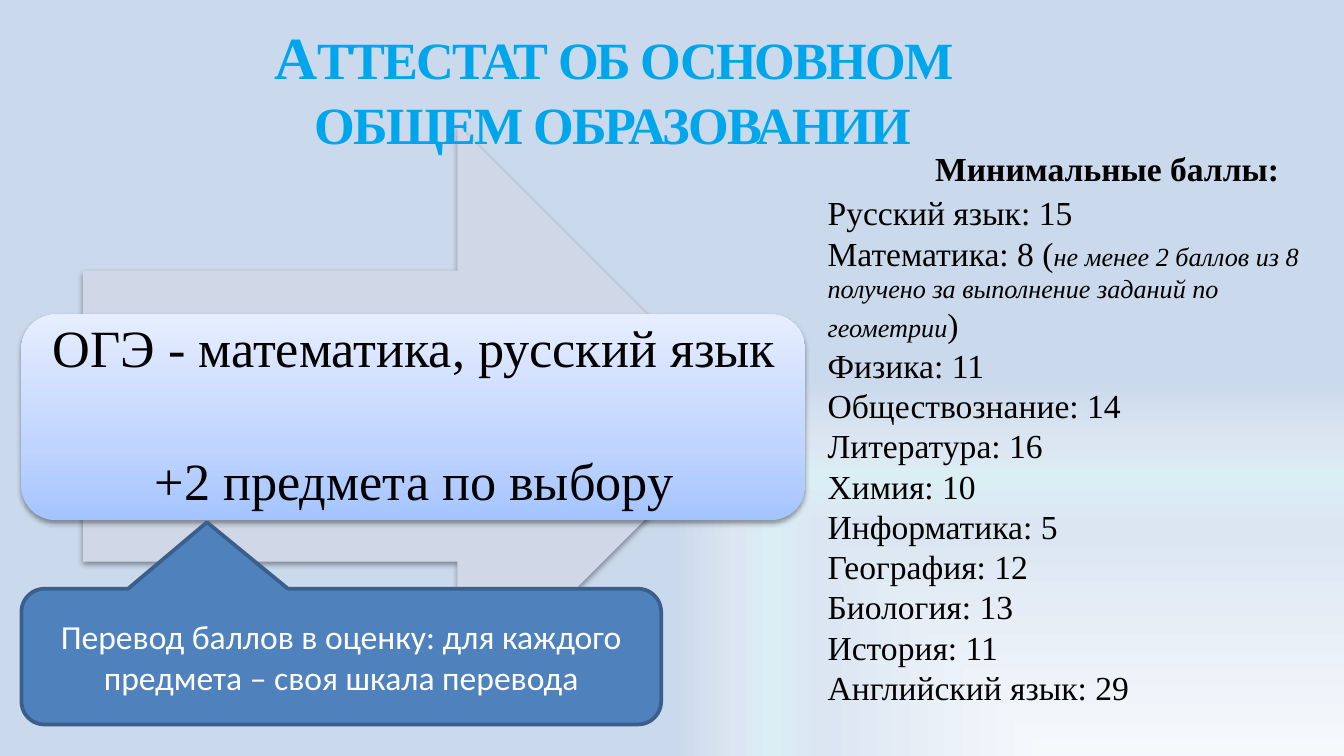
from dataclasses import dataclass

from pptx import Presentation
from pptx.dml.color import RGBColor
from pptx.enum.shapes import MSO_SHAPE as Preset
from pptx.enum.text import MSO_ANCHOR as Anchor, PP_ALIGN as Align
from pptx.oxml import parse_xml
from pptx.oxml.ns import nsdecls
from pptx.shapes.autoshape import Shape
from pptx.slide import Slide
from pptx.util import Pt

SERIF = "Times New Roman"
SANS = "Calibri"
BLACK = RGBColor(0x00, 0x00, 0x00)
WHITE = RGBColor(0xFF, 0xFF, 0xFF)
TITLE_BLUE = RGBColor(0x00, 0xA6, 0xEB)
ARROW_GREY = RGBColor(0xD0, 0xD8, 0xE8)
CALLOUT_FILL = RGBColor(0x4F, 0x81, 0xBD)
CALLOUT_LINE = RGBColor(0x3A, 0x5F, 0x8C)
BACKGROUND_STOPS = [
    (0, RGBColor(0xF6, 0xF9, 0xFC)),
    (60, RGBColor(0xDC, 0xE6, 0xF2)),
    (74, RGBColor(0xDB, 0xEE, 0xF4)),
    (83, RGBColor(0xDC, 0xE6, 0xF2)),
    (100, RGBColor(0xCA, 0xD9, 0xEB)),
]
PANEL_STOPS = [
    (0, RGBColor(0xA4, 0xC4, 0xFF)),
    (35, RGBColor(0xBF, 0xD4, 0xFF)),
    (100, RGBColor(0xE6, 0xEE, 0xFF)),
]
TO_CORNER = '<a:path path="rect"><a:fillToRect l="100000" t="100000"/></a:path>'
UPWARD = '<a:lin ang="16200000" scaled="0"/>'


@dataclass
class Box:
    left: float
    top: float
    width: float
    height: float

    def lengths(self) -> list[Pt]:
        return [Pt(value) for value in (self.left, self.top, self.width, self.height)]


@dataclass
class Span:
    text: str
    size: float
    italic: bool = False


def gradient_xml(stops: list[tuple[int, RGBColor]], direction: str) -> str:
    marks = "".join(
        f'<a:gs pos="{position * 1000}"><a:srgbClr val="{color}"/></a:gs>'
        for position, color in stops
    )
    return (f'<a:gradFill {nsdecls("a")} rotWithShape="1">'
            f"<a:gsLst>{marks}</a:gsLst>{direction}</a:gradFill>")


def paint_background(slide: Slide) -> None:
    background = parse_xml(
        f'<p:bg {nsdecls("p", "a")}><p:bgPr>'
        f"{gradient_xml(BACKGROUND_STOPS, TO_CORNER)}<a:effectLst/></p:bgPr></p:bg>"
    )
    slide.element.cSld.insert(0, background)


def add_shape(slide: Slide, preset: Preset, box: Box) -> Shape:
    """Add a preset shape without outline or shadow."""
    shape = slide.shapes.add_shape(preset, *box.lengths())
    shape.shadow.inherit = False
    shape.line.fill.background()
    return shape


def add_shadow(shape: Shape) -> None:
    effects = shape.element.spPr.find("{*}effectLst")
    effects.append(parse_xml(
        f'<a:outerShdw {nsdecls("a")} blurRad="{Pt(3.1)}" dist="{Pt(1.6)}" '
        'dir="5400000" rotWithShape="0"><a:srgbClr val="000000">'
        '<a:alpha val="38000"/></a:srgbClr></a:outerShdw>'
    ))


def write_text(shape: Shape, paragraphs: list[list[Span]], *, font: str = SERIF,
               color: RGBColor = BLACK, bold: bool = False, align: Align = Align.LEFT,
               anchor: Anchor = Anchor.TOP, wrap: bool = True, tracking: float = 0,
               line_spacing: float = 1, gap: float = 0) -> None:
    """Fill a shape with spans; a newline in a span is a line break."""
    frame = shape.text_frame
    frame.word_wrap = wrap
    frame.vertical_anchor = anchor
    for index, spans in enumerate(paragraphs):
        paragraph = frame.add_paragraph() if index else frame.paragraphs[0]
        paragraph.alignment = align
        paragraph.line_spacing = line_spacing
        paragraph.space_before = Pt(gap if index else 0)
        for span in spans:
            for number, line in enumerate(span.text.split("\n")):
                if number:
                    paragraph.add_line_break()
                run = paragraph.add_run()
                run.text = line
                run.font.name = font
                run.font.size = Pt(span.size)
                run.font.bold = bold
                run.font.italic = span.italic
                run.font.color.rgb = color
                if tracking:
                    run.font._element.set("spc", str(round(tracking * 100)))


def add_text(slide: Slide, box: Box, paragraphs: list[list[Span]], **text_format) -> None:
    write_text(slide.shapes.add_textbox(*box.lengths()), paragraphs, **text_format)


def main() -> None:
    presentation = Presentation()
    presentation.slide_width, presentation.slide_height = Pt(720), Pt(405)
    slide = presentation.slides.add_slide(presentation.slide_layouts[6])
    paint_background(slide)

    arrow = add_shape(slide, Preset.RIGHT_ARROW, Box(44.6, 67, 356.4, 311.8))
    arrow.fill.solid()
    arrow.fill.fore_color.rgb = ARROW_GREY
    add_shadow(arrow)

    panel = add_shape(slide, Preset.ROUNDED_RECTANGLE, Box(11.5, 168.5, 419.8, 110.2))
    panel.element.spPr.insert(2, parse_xml(gradient_xml(PANEL_STOPS, UPWARD)))
    add_shadow(panel)
    add_text(slide, Box(17.3, 173.5, 409, 99.4),
             [[Span("ОГЭ - математика, русский язык", 28)],
              [Span("+2 предмета по выбору", 28)]],
             align=Align.CENTER, anchor=Anchor.MIDDLE, line_spacing=0.9, gap=41)

    add_text(slide, Box(82.1, 4.3, 492.5, 85),
             [[Span("А", 32), Span("ТТЕСТАТ ОБ ОСНОВНОМ ОБЩЕМ ОБРАЗОВАНИИ", 28)]],
             color=TITLE_BLUE, bold=True, align=Align.CENTER, anchor=Anchor.MIDDLE,
             tracking=-1)

    scores = ["Физика: 11", "Обществознание: 14", "Литература: 16", "Химия: 10",
              "Информатика: 5", "География: 12", "Биология: 13", "История: 11",
              "Английский язык: 29"]
    add_text(slide, Box(436.3, 99.4, 276.5, 285.8),
             [[Span("Русский язык: 15\nМатематика: 8 (", 18),
               Span("не менее 2 баллов из 8 получено за выполнение заданий "
                    "по геометрии", 14, italic=True),
               Span("\n".join([")", *scores]), 18)]])
    add_text(slide, Box(493.9, 75.6, 200.9, 28.8),
             [[Span("Минимальные баллы:", 18)]], bold=True, wrap=False)

    callout = add_shape(slide, Preset.ROUNDED_RECTANGULAR_CALLOUT,
                        Box(11.5, 315.4, 342.7, 72.7))
    for index, value in enumerate((-0.21, -0.99, 0.17)):
        callout.adjustments[index] = value
    callout.fill.solid()
    callout.fill.fore_color.rgb = CALLOUT_FILL
    callout.line.color.rgb = CALLOUT_LINE
    callout.line.width = Pt(2)
    write_text(callout,
               [[Span("Перевод баллов в оценку: для каждого предмета – "
                      "своя шкала перевода", 18)]],
               font=SANS, color=WHITE, align=Align.CENTER, anchor=Anchor.MIDDLE)

    presentation.save("out.pptx")


if __name__ == "__main__":
    main()
